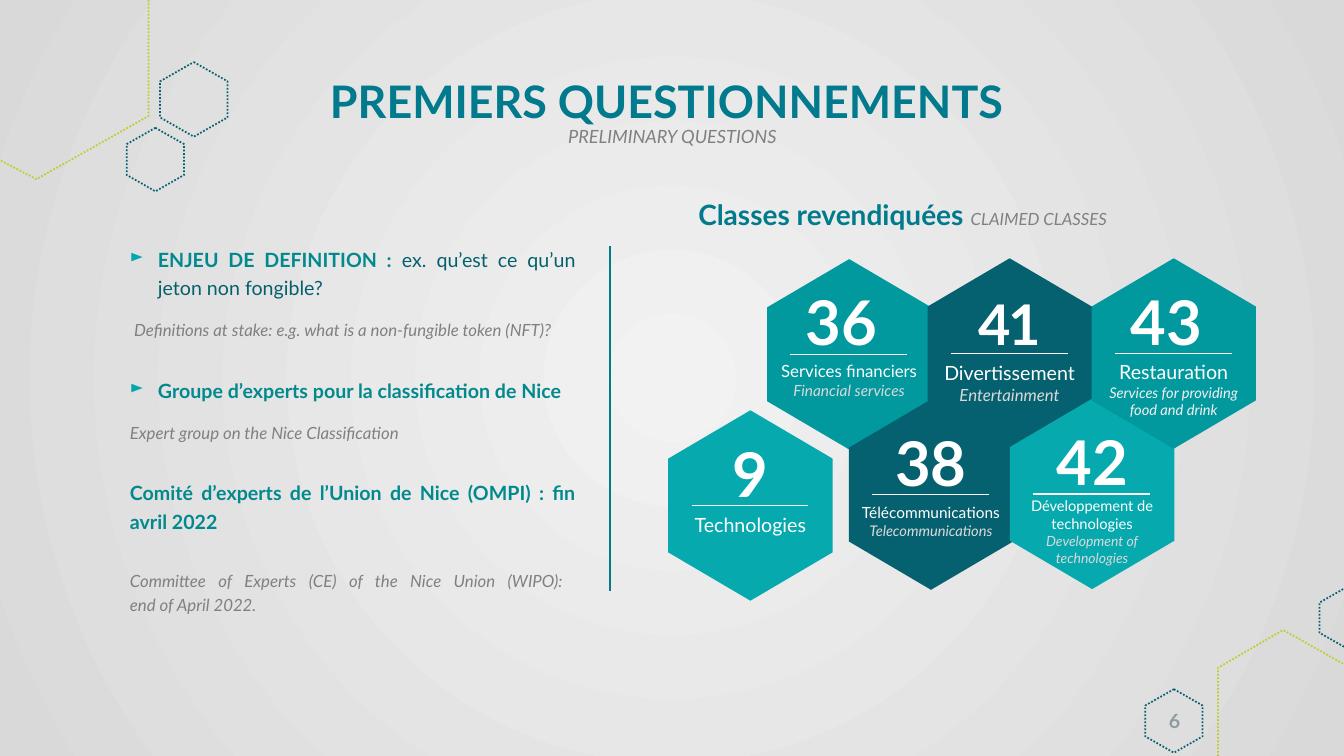
from copy import deepcopy

from lxml.etree import SubElement
from pptx import Presentation
from pptx.dml.color import RGBColor
from pptx.enum.dml import MSO_LINE
from pptx.enum.shapes import MSO_CONNECTOR, MSO_SHAPE
from pptx.enum.text import MSO_ANCHOR, PP_ALIGN
from pptx.oxml.ns import qn
from pptx.util import Pt

TITLE, STRONG, DEEP, BULLET = "007A8C", "01898D", "05606E", "01A9AF"
GREY, PALE, WHITE, LIME = "808080", "D9D9D9", "FFFFFF", "C1CC26"
AQUA, TEAL, DARK = "05A9AE", "01989E", "05616F"


def rgb(code):
    return RGBColor.from_string(code)


def fmt(size, color, bold=False, italic=False):
    return {"name": "Lato", "size": Pt(size), "bold": bold, "italic": italic, "color": color}


def set_all(target, values):
    for name, value in values.items():
        if name == "color":
            target.color.rgb = rgb(value)
        else:
            setattr(target, name, value)


def add_spans(para, spans):
    """Add (text, format) spans; a newline becomes a line break of the same format."""
    for text, values in spans:
        for index, piece in enumerate(text.split("\n")):
            if index:
                previous = para.runs[-1]
                para.add_line_break()
                para._p[-1].append(deepcopy(previous._r.rPr))
            if piece:
                span = para.add_run()
                span.text = piece
                set_all(span.font, values)


def add_text(page, left, top, width, height, paras, anchor=MSO_ANCHOR.TOP):
    """Add a centred text box; each paragraph is a list of spans."""
    box = page.shapes.add_textbox(Pt(left), Pt(top), Pt(width), Pt(height))
    frame = box.text_frame
    set_all(frame, {"word_wrap": True, "vertical_anchor": anchor})
    for index, spans in enumerate(paras):
        para = frame.add_paragraph() if index else frame.paragraphs[0]
        para.alignment = PP_ALIGN.CENTER
        add_spans(para, spans)
    return frame


def add_rule(page, x1, y1, x2, y2, color, weight):
    rule = page.shapes.add_connector(MSO_CONNECTOR.STRAIGHT, Pt(x1), Pt(y1), Pt(x2), Pt(y2))
    set_all(rule.line, {"color": color, "width": Pt(weight)})
    SubElement(rule._element.spPr, qn("a:effectLst"))


def add_hexagon(page, x, y, length, breadth, adjust):
    """Add a hexagon standing on a corner, centred on x, y."""
    shape = page.shapes.add_shape(MSO_SHAPE.HEXAGON, Pt(x - length / 2), Pt(y - breadth / 2),
                                  Pt(length), Pt(breadth))
    shape.rotation = 90
    shape.adjustments[0] = adjust
    shape.shadow.inherit = False
    return shape


def dot_outline(shape, color):
    shape.shadow.inherit = False
    shape.fill.background()
    set_all(shape.line, {"color": color, "width": Pt(1.25), "dash_style": MSO_LINE.ROUND_DOT})


def paint_background(page):
    fill = page.background.fill
    fill.gradient()
    for stop, position, color in zip(fill.gradient_stops, (0, 1), ("F2F2F2", "D9D9D9")):
        set_all(stop, {"position": position, "color": color})
    gradient = page.element.find(".//" + qn("a:gradFill"))
    gradient.remove(gradient.find(qn("a:lin")))
    circle = SubElement(gradient, qn("a:path"), {"path": "circle"})
    SubElement(circle, qn("a:fillToRect"), dict.fromkeys("ltrb", "50000"))


def draw_ornaments(page, left, top, hexagons, outlines):
    """Draw dotted hexagons and cut-off outlines from a corner point."""
    for x, y, length, breadth in hexagons:
        dot_outline(add_hexagon(page, left + x, top + y, length, breadth, 0.285), DARK)
    for color, points in outlines:
        corners = [(Pt(left + x), Pt(top + y)) for x, y in points]
        builder = page.shapes.build_freeform(*corners[0])
        builder.add_line_segments(corners[1:], close=False)
        dot_outline(builder.convert_to_shape(), color)


def draw_title(page, left, top, width, height):
    add_text(page, left, top, width, height, [[
        ("PREMIERS QUESTIONNEMENTS \n", fmt(32, TITLE, bold=True)),
        ("PRELIMINARY QUESTIONS", fmt(13, GREY, italic=True)),
    ]], MSO_ANCHOR.MIDDLE).paragraphs[0].line_spacing = 0.9


def draw_questions(page, left, top, width, height):
    strong, note = fmt(14, STRONG, bold=True), fmt(12, GREY, italic=True)
    # Each entry: bulleted, left indent, space after, spans
    entries = [
        (True, 20, 0, [("ENJEU DE DEFINITION : ", strong),
                       ("ex. qu’est ce qu’un jeton non fongible?", fmt(14, DEEP))]),
        (False, 3, 12, [("Definitions at stake: e.g. what is a non-fungible token (NFT)?", note)]),
        (True, 20, 0, [("Groupe d’experts pour la classification de Nice", strong)]),
        (False, 0, 12, [("Expert group on the Nice Classification", note)]),
        (False, 0, 12, [("Comité d’experts de l’Union de Nice (OMPI) : fin avril 2022", strong)]),
        (False, 0, 12, [("Committee of Experts (CE) of the Nice Union (WIPO): \n"
                         "end of April 2022.", note)]),
    ]
    frame = add_text(page, left, top, width, height, [entry[3] for entry in entries])
    for index, (para, entry) in enumerate(zip(frame.paragraphs, entries)):
        bulleted, indent, after, _ = entry
        set_all(para, {"alignment": PP_ALIGN.JUSTIFY, "line_spacing": 1.2,
                       "space_before": Pt(12 if index else 0), "space_after": Pt(after)})
        props = para._p.get_or_add_pPr()
        props.set("marL", str(Pt(indent)))
        if bulleted:
            props.set("indent", str(-Pt(indent)))
            color = SubElement(props, qn("a:buClr"))
            SubElement(color, qn("a:srgbClr"), val=BULLET)
            SubElement(props, qn("a:buSzPct"), val="90000")
            SubElement(props, qn("a:buChar"), char="►")


def draw_class(page, x, y, color, number, size, rise, drop, caption):
    """Draw one class tile centred on x, y."""
    tile = add_hexagon(page, x, y, 136, 117.4, 0.294)
    tile.fill.solid()
    tile.fill.fore_color.rgb = rgb(color)
    tile.line.fill.background()
    add_text(page, x - 58.7, y + drop, 117.4, 36, [[span] for span in caption])
    add_rule(page, x - 42, y, x + 41.5, y, WHITE, 1)
    return add_text(page, x - 58.7, y - rise, 117.4, 60,
                    [[(number, fmt(size, WHITE, bold=True))]])


def draw_classes(page, left, top):
    add_text(page, left + 1.5, top, 350.6, 32, [[
        ("Classes revendiquées ", fmt(20, TITLE, bold=True)),
        ("CLAIMED CLASSES", fmt(12, GREY, italic=True)),
    ]])
    upper, lower = top + 115, top + 215.3
    draw_class(page, left + 68, top + 223.6, AQUA, "9", 44, 53.6, 1.8,
               [("Technologies", fmt(14, WHITE))])
    draw_class(page, left + 138.6, upper + 0.6, TEAL, "36 ", 44, 54, 1,
               [("Services financiers", fmt(12, WHITE)),
                ("Financial services", fmt(11, PALE, italic=True))])
    draw_class(page, left + 197, lower + 0.5, DARK, "38", 44, 53.6, 2.5,
               [("Télécommunications", fmt(11, WHITE)),
                ("Telecommunications", fmt(10.5, PALE, italic=True))])
    tight = draw_class(page, left + 253.2, upper, DARK, "41", 40, 49.3, 1.8,
                       [("Divertissement", fmt(14, WHITE)),
                        ("Entertainment", fmt(12, PALE, italic=True))])
    tight.paragraphs[0].runs[0]._r.get_or_add_rPr().set("spc", "-150")
    draw_class(page, left + 312.1, lower, AQUA, "42", 44, 53.6, -1.3,
               [("Développement de technologies", fmt(10.5, WHITE)),
                ("Development of technologies", fmt(10, PALE, italic=True))])
    draw_class(page, left + 370.4, upper, TEAL, "43 ", 44, 53, 1,
               [("Restauration", fmt(14, WHITE)),
                ("Services for providing food and drink", fmt(10.5, "F2F2F2", italic=True))])


def main():
    deck = Presentation()
    set_all(deck, {"slide_width": Pt(960), "slide_height": Pt(540)})
    page = deck.slides.add_slide(deck.slide_layouts[6])
    paint_background(page)
    # Corner ornaments and page number
    draw_ornaments(page, 0, 0, [(138.4, 71, 53.3, 48.2), (111, 114, 45.4, 41)],
                   [(LIME, [(106, 0), (106, 83), (26, 128), (0, 114.5)])])
    draw_ornaments(page, 800, 400, [(38.5, 115, 45.4, 41)],
                   [(LIME, [(70, 140), (70, 77), (116.5, 50), (160, 74.5)]),
                    (DARK, [(160, 62), (142.5, 52), (142.5, 30.5), (160, 20.5)])])
    add_text(page, 808, 500.4, 62, 28.8, [[("6", fmt(14, "8C9DA3", bold=True))]],
             MSO_ANCHOR.MIDDLE)
    # Body
    draw_classes(page, 468, 137.5)
    draw_questions(page, 85.7, 170, 332.6, 252)
    add_rule(page, 436, 175.7, 436, 422, TITLE, 1.5)
    draw_title(page, 90.7, 28.8, 779, 104.4)
    deck.save("out.pptx")


if __name__ == "__main__":
    main()
